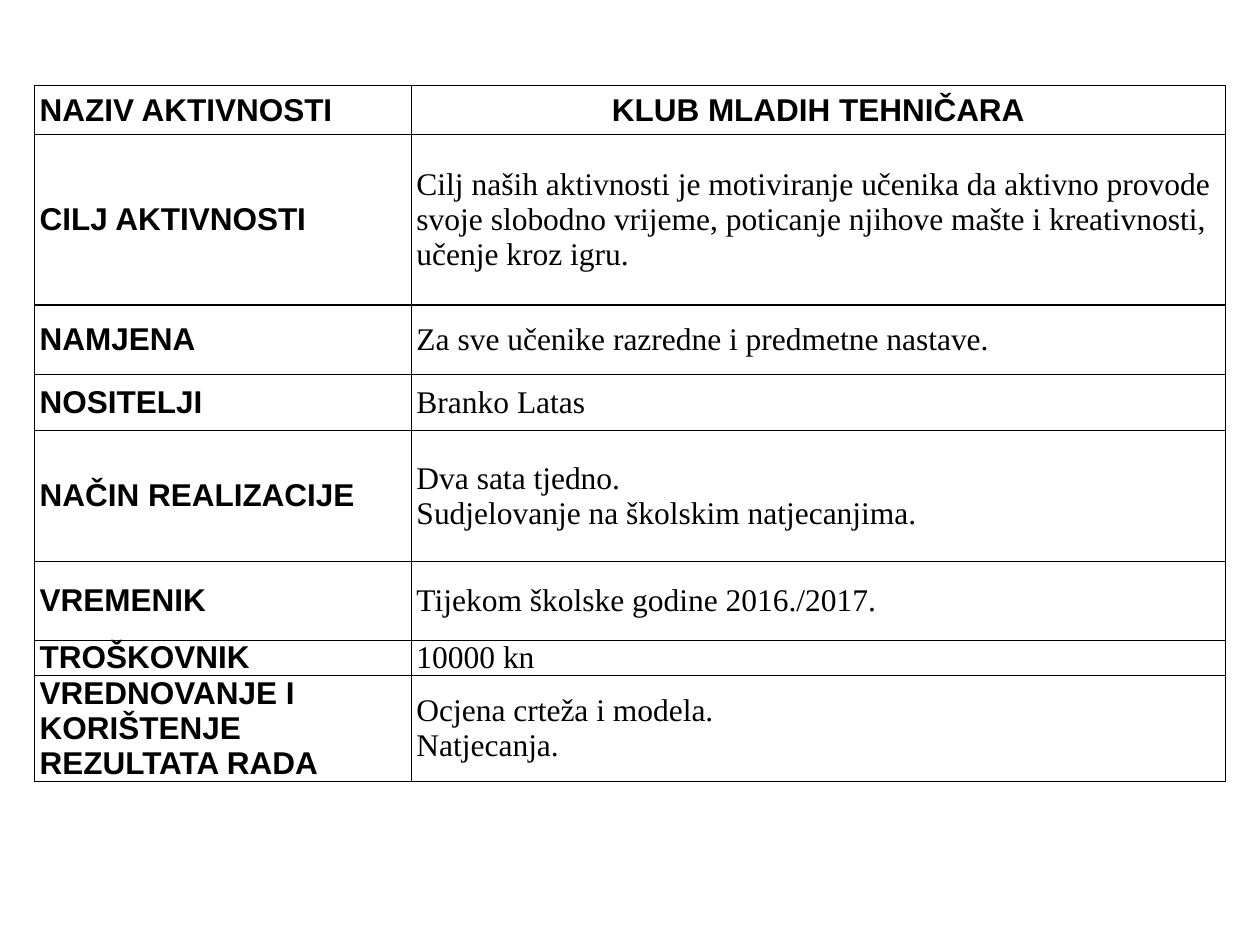
import pptx
import pptx.util
import pptx.dml.color
import pptx.enum.text
import pptx.oxml
import pptx.oxml.ns

Pt = pptx.util.Pt
INK = "000000"
COLS = [215.3, 465.1]
ROWS = [
    (28.3, "NAZIV AKTIVNOSTI", "KLUB MLADIH TEHNIČARA"),
    (97.2, "CILJ AKTIVNOSTI",
     "Cilj naših aktivnosti je motiviranje učenika da aktivno provode svoje "
     "slobodno vrijeme, poticanje njihove mašte i kreativnosti, učenje kroz igru."),
    (39.6, "NAMJENA", "Za sve učenike razredne i predmetne nastave."),
    (32.1, "NOSITELJI", "Branko Latas"),
    (74.9, "NAČIN REALIZACIJE",
     "Dva sata tjedno.\nSudjelovanje na školskim natjecanjima."),
    (45, "VREMENIK", "Tijekom školske godine 2016./2017."),
    (20, "TROŠKOVNIK", "10000 kn"),
    (60.5, "VREDNOVANJE I KORIŠTENJE REZULTATA RADA",
     "Ocjena crteža i modela.\nNatjecanja."),
]


def color(code):
    """Return the colour for a hex string."""
    return pptx.dml.color.RGBColor.from_string(code)


def border(cell, width):
    """Draw a solid line on all four sides of a cell."""
    props = cell._tc.get_or_add_tcPr()
    for side in "LRTB":
        props.append(pptx.oxml.parse_xml(
            f'<a:ln{side} {pptx.oxml.ns.nsdecls("a")} w="{Pt(width)}">'
            f'<a:solidFill><a:srgbClr val="{INK}"/></a:solidFill></a:ln{side}>'))


def write(cell, text, bold, center):
    """Fill a cell with bold Arial or plain Times New Roman text."""
    border(cell, 0.75)
    cell.fill.background()
    cell.margin_left = cell.margin_right = Pt(2.9)
    cell.margin_top = cell.margin_bottom = Pt(0)
    cell.vertical_anchor = pptx.enum.text.MSO_ANCHOR.MIDDLE
    cell.text = text
    align = pptx.enum.text.PP_ALIGN
    for para in cell.text_frame.paragraphs:
        para.alignment = align.CENTER if center else align.LEFT
        para.font.name = "Arial" if bold else "Times New Roman"
        para.font.size = Pt(18)
        para.font.bold = bold
        para.font.color.rgb = color(INK)


def plan(slide, left, top):
    """Place the activity table with its top left corner at a point."""
    high = sum(row[0] for row in ROWS)
    table = slide.shapes.add_table(
        len(ROWS), len(COLS), Pt(left), Pt(top), Pt(sum(COLS)), Pt(high)).table
    table.first_row = table.horz_banding = False
    for col, width in zip(table.columns, COLS):
        col.width = Pt(width)
    for i, (height, *texts) in enumerate(ROWS):
        table.rows[i].height = Pt(height)
        for j, text in enumerate(texts):
            head = i == 0
            write(table.cell(i, j), text, head or j == 0, head and j == 1)


def main():
    """Build and save the slide."""
    deck = pptx.Presentation()
    deck.slide_width, deck.slide_height = Pt(720), Pt(540)
    slide = deck.slides.add_slide(deck.slide_layouts[6])
    plan(slide, 19.8, 48.8)
    deck.save("out.pptx")


if __name__ == "__main__":
    main()
